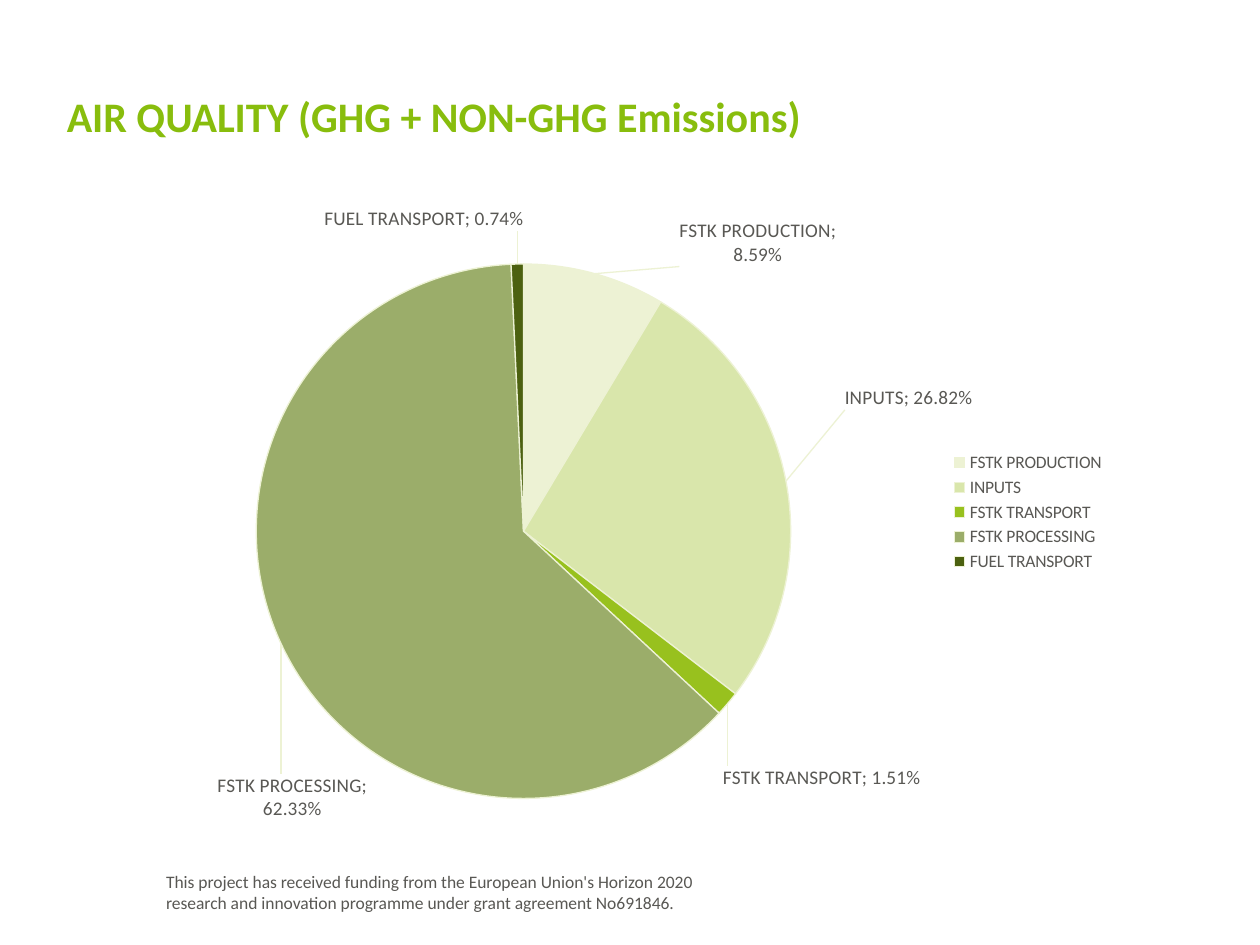
"""Build the air quality slide: a pie of emission shares with a funding note."""
import copy

import pptx
import pptx.chart.data
import pptx.dml.color
import pptx.enum.chart
import pptx.enum.text
import pptx.oxml
import pptx.oxml.ns
import pptx.util

Inches, Pt = pptx.util.Inches, pptx.util.Pt
qn = pptx.oxml.ns.qn
COLORS = {
    "title": "88BD0D",
    "text": "595854",
    "FSTK PRODUCTION": "EDF2D4",
    "INPUTS": "D9E6AB",
    "FSTK TRANSPORT": "98C11E",
    "FSTK PROCESSING": "9BAD6A",
    "FUEL TRANSPORT": "4C6110",
}
SHARES = [
    ("FSTK PRODUCTION", 0.0859, (0.08, 0)),
    ("INPUTS", 0.2682, (0.05, -0.11)),
    ("FSTK TRANSPORT", 0.0151, (-0.01, 0.09)),
    ("FSTK PROCESSING", 0.6233, (0.09, 0.2)),
    ("FUEL TRANSPORT", 0.0074, (-0.09, -0.04)),
]
FUNDING_NOTE = [
    "This project has received funding from the European Union's Horizon 2020",
    "research and innovation programme under grant agreement No691846.",
]
CHART_NS = pptx.oxml.ns.nsdecls("c", "a")


def style(font, size, color, bold=False):
    font.name, font.size, font.bold = "Calibri", Pt(size), bold
    font.color.rgb = pptx.dml.color.RGBColor.from_string(COLORS[color])


def layout_xml(**values):
    settings = "".join(f'<c:{tag} val="{value}"/>' for tag, value in values.items())
    return f"<c:layout {CHART_NS}><c:manualLayout>{settings}</c:manualLayout></c:layout>"


deck = pptx.Presentation()
deck.slide_width, deck.slide_height = Inches(10), Inches(7.5)
slide = deck.slides.add_slide(deck.slide_layouts[5])

note = slide.shapes.add_textbox(Inches(1.22), Inches(6.86), Inches(4.8), Inches(0.44))
note.text_frame.word_wrap = True
for index, sentence in enumerate(FUNDING_NOTE):
    line = note.text_frame.add_paragraph() if index else note.text_frame.paragraphs[0]
    words = line.add_run()
    words.text = sentence
    style(words.font, 10, "text")

title = slide.shapes.title
title.left, title.top = Inches(0.43), Inches(0.29)
title.width, title.height = Inches(7.8), Inches(1.25)
title.text_frame.vertical_anchor = pptx.enum.text.MSO_ANCHOR.MIDDLE
heading = title.text_frame.paragraphs[0]
heading.alignment = pptx.enum.text.PP_ALIGN.LEFT
heading_words = heading.add_run()
heading_words.text = "AIR QUALITY (GHG + NON-GHG Emissions)"
style(heading_words.font, 24, "title", True)

emissions = pptx.chart.data.CategoryChartData(number_format="0.00%")
emissions.categories = [stage for stage, share, shift in SHARES]
emissions.add_series("Series 1", [share for stage, share, shift in SHARES])
pie = slide.shapes.add_chart(
    pptx.enum.chart.XL_CHART_TYPE.PIE,
    Inches(0.67), Inches(1.54), Inches(8.2), Inches(5.05), emissions,
).chart
style(pie.font, 10, "text")
pie.has_title = False
pie.has_legend = True
pie.legend.position = pptx.enum.chart.XL_LEGEND_POSITION.RIGHT
pie.legend.include_in_layout = False
pie.plots[0].vary_by_categories = True

plot_area = pie.plots[0]._element.getparent()
for automatic in plot_area.findall(qn("c:layout")):
    plot_area.remove(automatic)
plot_area.insert(0, pptx.oxml.parse_xml(layout_xml(
    layoutTarget="inner", xMode="edge", yMode="edge", x=0.16, y=0.11, w=0.53, h=0.84)))

stages = pie.plots[0].series[0]
labels = stages.data_labels
style(labels.font, 11, "text")
labels.number_format, labels.number_format_is_linked = "0.00%", False
labels.position = pptx.enum.chart.XL_LABEL_POSITION.OUTSIDE_END
labels.show_value = labels.show_category_name = True
labels.show_percentage = labels.show_legend_key = labels.show_series_name = False
label_set = labels._element
for leader in label_set.findall(qn("c:showLeaderLines")):
    label_set.remove(leader)
label_set.append(pptx.oxml.parse_xml(f"<c:separator {CHART_NS}>; </c:separator>"))
shared_settings = list(label_set)

for index, (stage, share, (shift_x, shift_y)) in enumerate(SHARES):
    wedge = stages.points[index].format
    wedge.fill.solid()
    wedge.fill.fore_color.rgb = pptx.dml.color.RGBColor.from_string(COLORS[stage])
    wedge.line.color.rgb = pptx.dml.color.RGBColor.from_string(COLORS["FSTK PRODUCTION"])
    wedge.line.width = Pt(0.75)
    label = pptx.oxml.parse_xml(
        f'<c:dLbl {CHART_NS}><c:idx val="{index}"/>{layout_xml(x=shift_x, y=shift_y)}</c:dLbl>')
    label.extend(copy.deepcopy(shared_settings))
    label_set.insert(index, label)

label_set.append(pptx.oxml.parse_xml(f'<c:showLeaderLines {CHART_NS} val="1"/>'))
label_set.append(pptx.oxml.parse_xml(
    f'<c:leaderLines {CHART_NS}><c:spPr><a:ln w="9525"><a:solidFill>'
    f'<a:srgbClr val="{COLORS["FSTK PRODUCTION"]}"/>'
    "</a:solidFill></a:ln></c:spPr></c:leaderLines>"))

deck.save("out.pptx")
